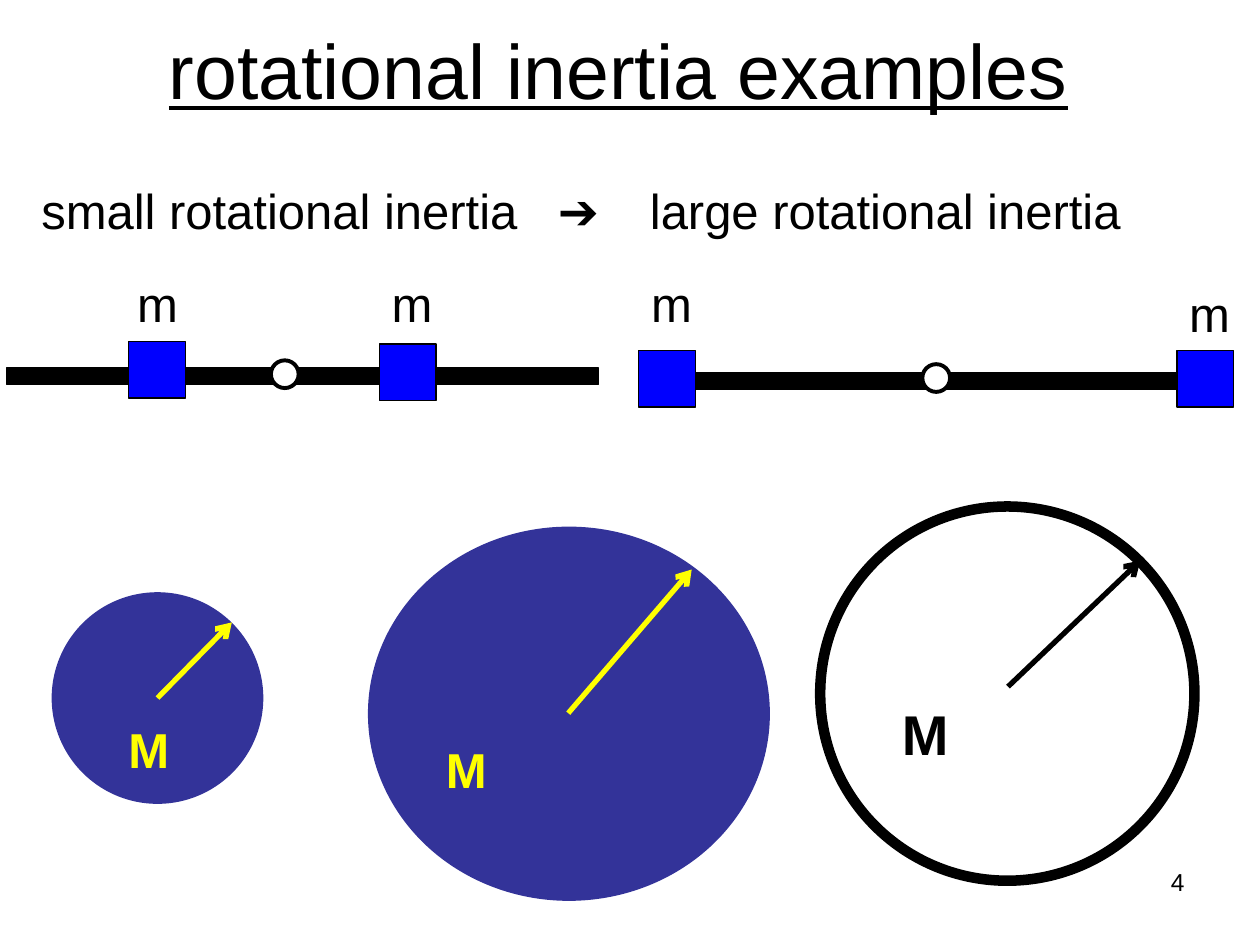
import pptx
import pptx.util
import pptx.dml.color
import pptx.enum.shapes
import pptx.enum.text
import pptx.oxml
import pptx.oxml.ns
from lxml import etree

Inches = pptx.util.Inches
Pt = pptx.util.Pt
Shape = pptx.enum.shapes.MSO_SHAPE
Align = pptx.enum.text.PP_ALIGN
COLORS = {"ink": "000000", "paper": "FFFFFF", "mass": "0000FF",
          "disk": "333399", "mark": "FFFF00"}


def rgb(name):
    """Return the named colour."""
    return pptx.dml.color.RGBColor.from_string(COLORS[name])


def style(para, size, color="ink", bold=False):
    """Set the font of a paragraph."""
    font = para.font
    font.name, font.size, font.bold = "Arial", Pt(size), bold
    font.color.rgb = rgb(color)


def label(shapes, text, box, size, color="ink", bold=False, wrap=False):
    """Add a text box and return its paragraph."""
    frame = shapes.add_textbox(*map(Inches, box)).text_frame
    frame.word_wrap = wrap
    para = frame.paragraphs[0]
    para.text = text
    style(para, size, color, bold)
    return para


def solid(shapes, kind, box, fill=None, line=None, width=0.75):
    """Add a preset shape with an optional fill and line."""
    shape = shapes.add_shape(kind, *map(Inches, box))
    shape.shadow.inherit = False
    if fill:
        shape.fill.solid()
        shape.fill.fore_color.rgb = rgb(fill)
    else:
        shape.fill.background()
    if line:
        shape.line.color.rgb = rgb(line)
        shape.line.width = Pt(width)
    else:
        shape.line.fill.background()


def arrow(shapes, start, end, color):
    """Add a straight line with an open arrowhead at its end."""
    link = shapes.add_connector(pptx.enum.shapes.MSO_CONNECTOR.STRAIGHT,
                                *map(Inches, start + end))
    link.line.color.rgb = rgb(color)
    link.line.width = Pt(3)
    tag = pptx.oxml.ns.qn
    etree.SubElement(link.line._get_or_add_ln(), tag("a:tailEnd"), type="arrow")
    etree.SubElement(link._element.spPr, tag("a:effectLst"))


def header(slide, left, top, width, height):
    """Place the underlined title."""
    title = slide.shapes.title
    title.left, title.top, title.width, title.height = map(
        Inches, (left, top, width, height))
    title.text_frame.vertical_anchor = pptx.enum.text.MSO_ANCHOR.MIDDLE
    para = title.text_frame.paragraphs[0]
    para.text = "rotational inertia examples"
    para.alignment = Align.CENTER
    style(para, 44)
    para.font.underline = True


def compare(slide, left, top, width, height):
    """Place the line that compares small and large inertia."""
    para = label(slide.shapes,
                 "small rotational inertia\t➔\tlarge rotational inertia",
                 (left, top, width, height), 28, wrap=True)
    tag = pptx.oxml.ns.qn
    tabs = etree.Element(tag("a:tabLst"))
    for stop in (4.1, 4.83):
        etree.SubElement(tabs, tag("a:tab"), pos=str(Inches(stop)), algn="l")
    para._p.get_or_add_pPr().insert(0, tabs)


def rod(slide, left, top, bar, pivot, masses, names):
    """Place a rod with a pivot and two labelled masses."""
    shapes = slide.shapes.add_group_shape().shapes

    def put(spot, width, height):
        return left + spot[0], top + spot[1], width, height

    solid(shapes, Shape.RECTANGLE, put(bar, 4.7, 0.13), "ink", "ink")
    solid(shapes, Shape.OVAL, put(pivot, 0.22, 0.22), "paper", "ink", 2.25)
    for spot in masses:
        solid(shapes, Shape.RECTANGLE, put(spot, 0.45, 0.45), "mass", "ink")
    for spot in names:
        label(shapes, "m", put(spot, 0.53, 0.57), 28)


def wheel(slide, box, start, end, name, color, size=28, fill=None, line=None):
    """Place a disk or ring with its radius arrow and mass label."""
    shapes = slide.shapes.add_group_shape().shapes
    left, top = box[:2]
    solid(shapes, Shape.OVAL, box, fill, line, 6)
    arrow(shapes, (left + start[0], top + start[1]),
          (left + end[0], top + end[1]), color)
    label(shapes, "M", (left + name[0], top + name[1], 0.57, 0.57),
          size, color, True)


def main():
    """Build and save the slide."""
    deck = pptx.Presentation()
    deck.slide_width, deck.slide_height = Inches(10), Inches(7.5)
    slide = deck.slides.add_slide(deck.slide_layouts[5])
    header(slide, 0.41, -0.08, 9, 1.25)
    page = label(slide.shapes, "4", (7.17, 6.83, 2.33, 0.52), 14, wrap=True)
    page.alignment = Align.RIGHT
    compare(slide, 0.23, 1.38, 9.5, 0.57)
    rod(slide, 5.07, 2.12, (0.01, 0.84), (2.25, 0.77),
        [(0, 0.66), (4.27, 0.66)], [(0, 0), (4.27, 0.08)])
    rod(slide, 0.05, 2.12, (0, 0.8), (2.1, 0.74),
        [(0.97, 0.59), (2.96, 0.61)], [(0.94, 0), (2.96, 0)])
    wheel(slide, (2.92, 4.18, 3.19, 2.97), (1.59, 1.48), (2.57, 0.34),
          (0.52, 1.64), "mark", fill="disk")
    wheel(slide, (0.41, 4.7, 1.68, 1.68), (0.84, 0.84), (1.43, 0.24),
          (0.51, 0.96), "mark", fill="disk")
    wheel(slide, (6.51, 4.02, 2.97, 2.97), (1.49, 1.43), (2.54, 0.43),
          (0.55, 1.48), "ink", 32, line="ink")
    deck.save("out.pptx")


if __name__ == "__main__":
    main()
